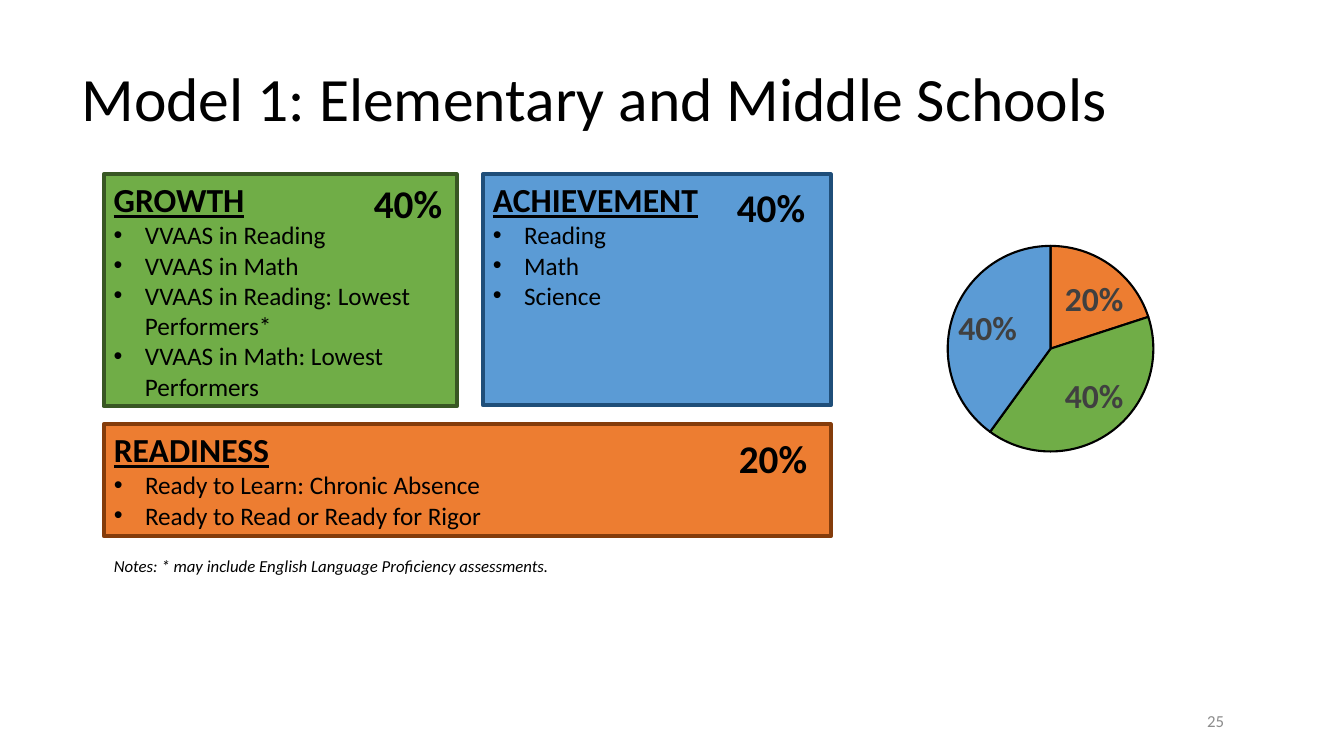
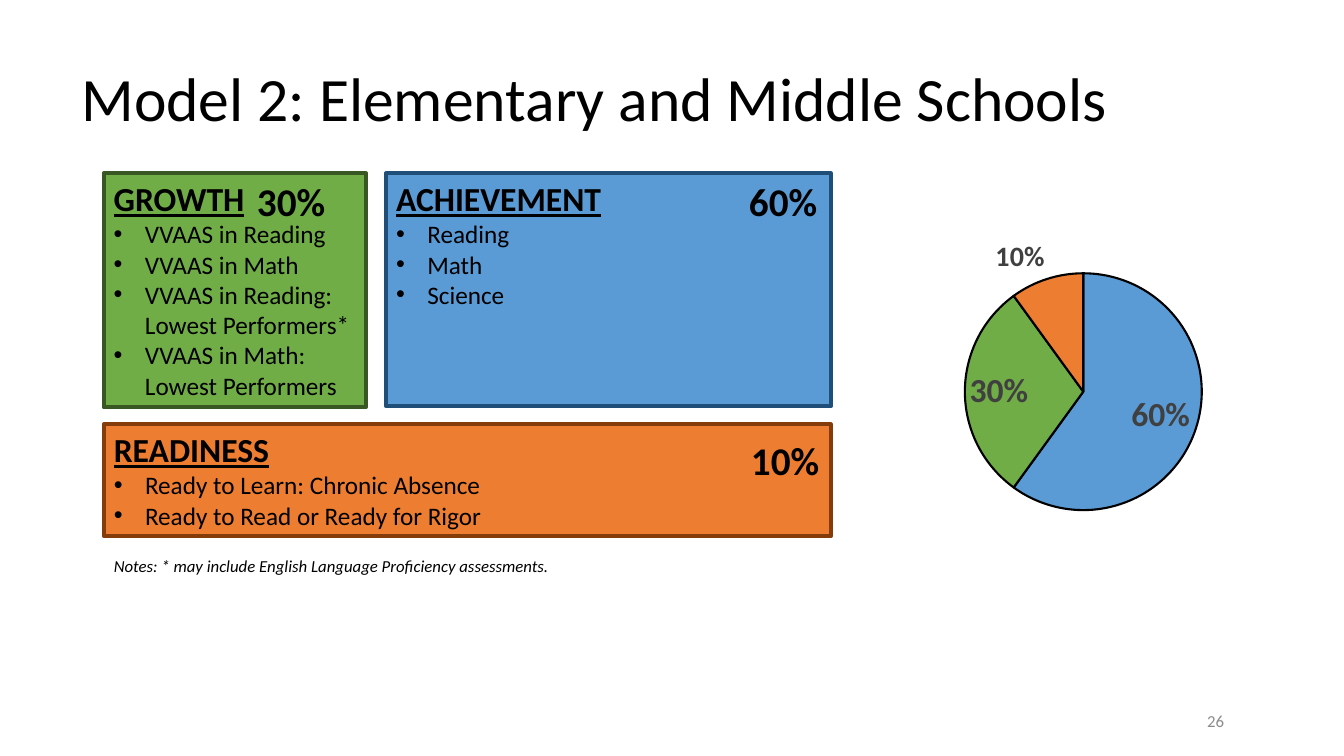
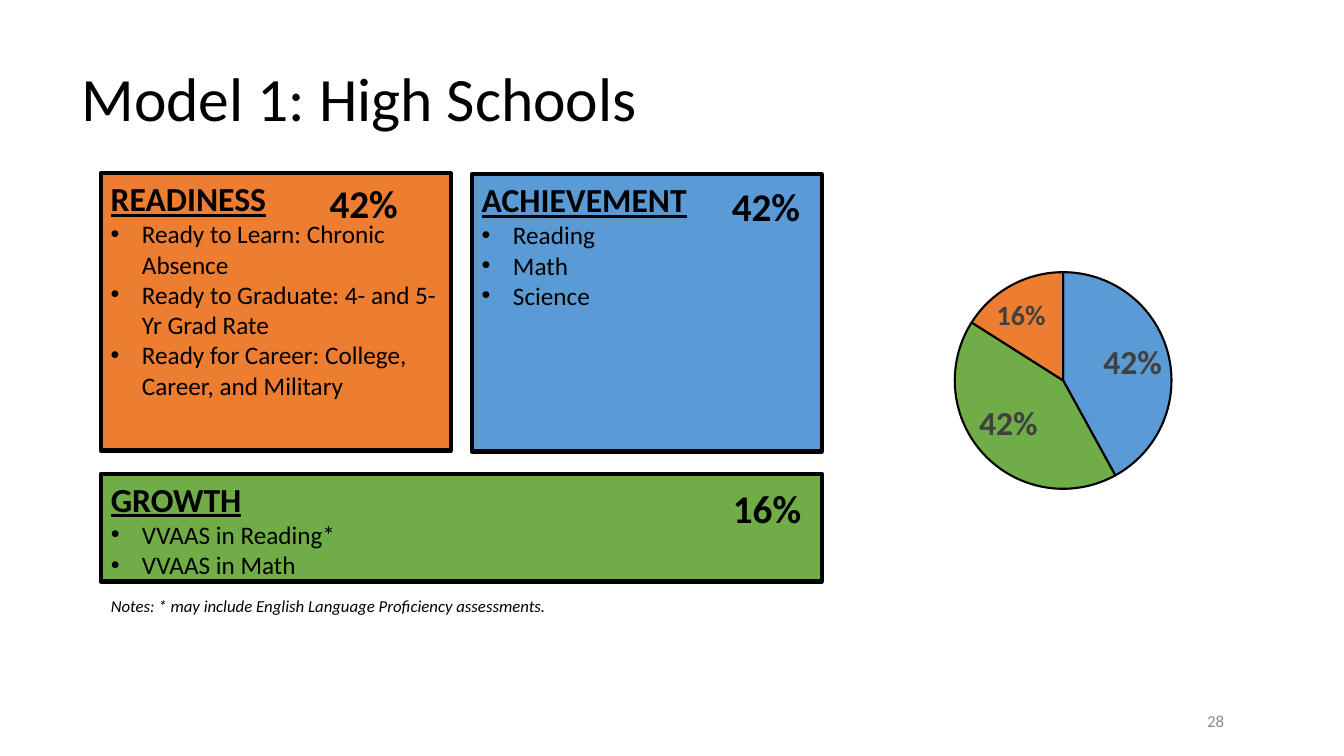
from dataclasses import dataclass

from lxml.etree import SubElement
from pptx import Presentation
from pptx.chart.data import CategoryChartData
from pptx.dml.color import RGBColor
from pptx.enum.chart import XL_CHART_TYPE, XL_LABEL_POSITION
from pptx.enum.shapes import MSO_SHAPE
from pptx.enum.text import MSO_ANCHOR, PP_ALIGN
from pptx.oxml import parse_xml
from pptx.oxml.ns import nsdecls, qn
from pptx.util import Inches, Pt


@dataclass(frozen=True)
class Theme:
    font: str = "Calibri"
    # Colours
    ink: str = "000000"
    page_number: str = "8C8C8C"
    label: str = "404040"
    green: str = "70AD47"
    green_edge: str = "385723"
    blue: str = "5B9BD5"
    blue_edge: str = "1F4E79"
    orange: str = "ED7D31"
    orange_edge: str = "843C0B"
    # Type sizes
    title_size: int = 44
    weight_size: int = 28
    heading_size: int = 24
    bullet_size: int = 18
    small_size: int = 12
    chart_size: int = 10
    # Line widths and bullet indent
    box_line: float = 3
    slice_line: float = 1.5
    indent: float = 0.31


THEME = Theme()
NOTE = "Notes: * may include English Language Proficiency assessments."


def rgb(colour):
    return RGBColor.from_string(colour)


class Deck:
    """Holds the style and the current slide."""

    def __init__(self, theme):
        self.theme = theme
        self.presentation = Presentation()
        self.presentation.slide_width = Inches(13.33)
        self.presentation.slide_height = Inches(7.5)
        self.slide = None

    def style(self, font, size, colour=None, bold=False):
        font.name = self.theme.font
        font.size = Pt(size)
        font.bold = bold
        font.color.rgb = rgb(colour or self.theme.ink)

    def run(self, paragraph, text, size, colour=None, bold=False):
        run = paragraph.add_run()
        run.text = text
        self.style(run.font, size, colour, bold)
        return run

    def text(self, at, text, size, colour=None, bold=False, anchor=MSO_ANCHOR.TOP):
        frame = self.slide.shapes.add_textbox(*map(Inches, at)).text_frame
        frame.word_wrap = True
        frame.vertical_anchor = anchor
        paragraph = frame.paragraphs[0]
        return paragraph, self.run(paragraph, text, size, colour, bold)

    def new_slide(self, title, number):
        self.slide = self.presentation.slides.add_slide(self.presentation.slide_layouts[6])
        heading, _ = self.text((0.71, 0.28, 12.1, 1.45), title,
                               self.theme.title_size, anchor=MSO_ANCHOR.MIDDLE)
        heading.line_spacing = 0.9
        footer, _ = self.text((9.24, 6.95, 3, 0.4), str(number), self.theme.small_size,
                              self.theme.page_number, anchor=MSO_ANCHOR.MIDDLE)
        footer.alignment = PP_ALIGN.RIGHT

    def bullet(self, paragraph, text):
        properties = paragraph._p.get_or_add_pPr()
        indent = Inches(self.theme.indent)
        properties.set("marL", str(indent))
        properties.set("indent", str(-indent))
        SubElement(properties, qn("a:buFont")).set("typeface", "Arial")
        SubElement(properties, qn("a:buChar")).set("char", "•")
        self.run(paragraph, text, self.theme.bullet_size)

    def category(self, at, heading, bullets, fill, edge):
        box = self.slide.shapes.add_shape(MSO_SHAPE.RECTANGLE, *map(Inches, at))
        box.shadow.inherit = False
        box.fill.solid()
        box.fill.fore_color.rgb = rgb(fill)
        box.line.color.rgb = rgb(edge)
        box.line.width = Pt(self.theme.box_line)
        frame = box.text_frame
        frame.word_wrap = True
        frame.vertical_anchor = MSO_ANCHOR.TOP
        first = frame.paragraphs[0]
        self.run(first, heading, self.theme.heading_size, bold=True).font.underline = True
        for item in bullets:
            self.bullet(frame.add_paragraph(), item)
        for paragraph in frame.paragraphs:
            paragraph.alignment = PP_ALIGN.LEFT

    def weight(self, left, top, text):
        self.text((left, top, 0.95, 0.57), text, self.theme.weight_size, bold=True)

    def note(self, left, top):
        _, run = self.text((left, top, 5.81, 0.3), NOTE, self.theme.small_size)
        run.font.italic = True

    def pie(self, at, circle, values, colours, label_sizes):
        data = CategoryChartData(number_format="0%")
        data.categories = ["1", "2", "3"]
        data.add_series("Series 1", values)
        chart = self.slide.shapes.add_chart(
            XL_CHART_TYPE.PIE, *map(Inches, at), data).chart
        chart.has_legend = False
        chart.has_title = False
        self.style(chart.font, self.theme.chart_size)
        plot = chart.plots[0]
        plot.vary_by_categories = False
        series = plot.series[0]

        # Value labels, smaller on a narrow slice
        labels = series.data_labels
        labels.show_value = True
        labels.show_percentage = False
        labels.number_format = "0%"
        labels.number_format_is_linked = False
        labels.position = XL_LABEL_POSITION.BEST_FIT
        self.style(labels.font, label_sizes[0], self.theme.label, True)
        for index, (colour, size) in enumerate(zip(colours, label_sizes)):
            point = series.points[index]
            point.format.fill.solid()
            point.format.fill.fore_color.rgb = rgb(colour)
            point.format.line.color.rgb = rgb(self.theme.ink)
            point.format.line.width = Pt(self.theme.slice_line)
            self.style(point.data_label.font, size, self.theme.label, True)
            point.data_label.position = XL_LABEL_POSITION.BEST_FIT

        # Circle placed as fractions of the chart frame
        left, top, width, height = at
        circle_left, circle_top, diameter = circle
        fractions = {"x": (circle_left - left) / width, "y": (circle_top - top) / height,
                     "w": diameter / width, "h": diameter / height}
        sizes = "".join(f'<c:{key} val="{value:.3f}"/>' for key, value in fractions.items())
        area = chart._chartSpace.chart.plotArea
        for automatic in area.findall(qn("c:layout")):
            area.remove(automatic)
        area.insert(0, parse_xml(
            f'<c:layout {nsdecls("c")}><c:manualLayout><c:layoutTarget val="inner"/>'
            f'<c:xMode val="edge"/><c:yMode val="edge"/>{sizes}</c:manualLayout></c:layout>'))


GROWTH = ["VVAAS in Reading", "VVAAS in Math", "VVAAS in Reading: Lowest Performers*",
          "VVAAS in Math: Lowest Performers"]
ACHIEVEMENT = ["Reading", "Math", "Science"]
READINESS = ["Ready to Learn: Chronic Absence", "Ready to Read or Ready for Rigor"]
HIGH_READINESS = ["Ready to Learn: Chronic Absence", "Ready to Graduate: 4- and 5-Yr Grad Rate",
                  "Ready for Career: College, Career, and Military"]
HIGH_GROWTH = ["VVAAS in Reading*", "VVAAS in Math"]


def main():
    deck = Deck(THEME)
    green = (THEME.green, THEME.green_edge)
    blue = (THEME.blue, THEME.blue_edge)
    orange = (THEME.orange, THEME.orange_edge)
    high_green, high_blue, high_orange = (
        (fill, THEME.ink) for fill in (THEME.green, THEME.blue, THEME.orange))
    blue_first = (THEME.blue, THEME.green, THEME.orange)
    lower_readiness = ((1.03, 4.21, 7.21, 1.11), "READINESS", READINESS, *orange)

    # Per slide: category boxes, weights, note position and pie
    models = [
        ("Model 1: Elementary and Middle Schools", 25,
         [((1.03, 1.73, 3.5, 2.3), "GROWTH", GROWTH, *green),
          ((4.79, 1.73, 3.45, 2.29), "ACHIEVEMENT", ACHIEVEMENT, *blue),
          lower_readiness],
         [(3.61, 1.73, "40%"), (7.21, 1.77, "40%"), (7.23, 4.26, "20%")],
         (1.03, 5.46),
         ((7.81, 1.96, 5, 3), (9.4, 2.44, 2.04), (0.2, 0.4, 0.4),
          (THEME.orange, THEME.green, THEME.blue), (24, 24, 24))),
        ("Model 2: Elementary and Middle Schools", 26,
         [((1.03, 1.72, 2.6, 2.32), "GROWTH", GROWTH, *green),
          ((3.83, 1.72, 4.41, 2.31), "ACHIEVEMENT", ACHIEVEMENT, *blue),
          lower_readiness],
         [(2.45, 1.71, "30%"), (7.33, 1.71, "60%"), (7.35, 4.28, "10%")],
         (1.03, 5.46),
         ((8.23, 2.2, 5, 2.99), (9.57, 2.71, 2.35), (0.6, 0.3, 0.1),
          blue_first, (24, 24, 20))),
        ("Model 1: High Schools", 28,
         [((1, 1.72, 3.47, 2.75), "READINESS", HIGH_READINESS, *high_orange),
          ((4.68, 1.73, 3.47, 2.75), "ACHIEVEMENT", ACHIEVEMENT, *high_blue),
          ((1, 4.7, 7.15, 1.07), "GROWTH", HIGH_GROWTH, *high_green)],
         [(3.17, 1.73, "42%"), (7.16, 1.76, "42%"), (7.17, 4.76, "16%")],
         (1, 5.86),
         ((8.13, 2.24, 5, 2.99), (9.47, 2.7, 2.15), (0.42, 0.42, 0.16),
          blue_first, (24, 24, 20))),
    ]
    for title, number, categories, weights, note, pie in models:
        deck.new_slide(title, number)
        for category in categories:
            deck.category(*category)
        for weight in weights:
            deck.weight(*weight)
        deck.note(*note)
        deck.pie(*pie)

    deck.presentation.save("out.pptx")


if __name__ == "__main__":
    main()
